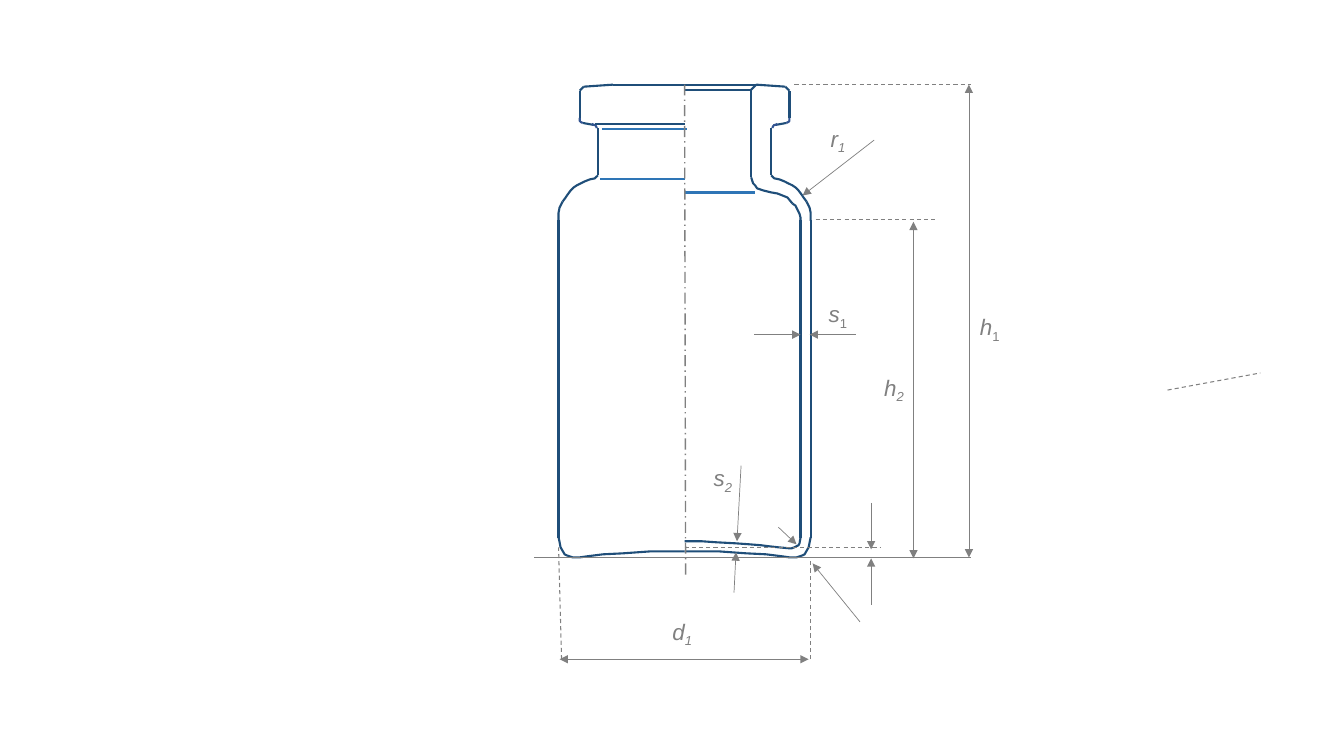
from dataclasses import dataclass

from lxml.etree import SubElement
from pptx import Presentation
from pptx.dml.color import RGBColor
from pptx.enum.dml import MSO_LINE as DASH
from pptx.enum.shapes import MSO_CONNECTOR as CONN
from pptx.enum.text import MSO_AUTO_SIZE as FIT
from pptx.oxml.ns import qn
from pptx.util import Pt

PX = 9144  # EMU per px, 100 px to the inch


@dataclass(frozen=True)
class Theme:
    glass: str = "1F4E79"
    fillet: str = "325491"
    edge: str = "2E75B6"
    grey: str = "808080"
    font: str = "Arial"
    label: float = 16
    wall: float = 1.5
    axis: float = 1
    guide: float = 0.75
    arrow: float = 0.5


THEME = Theme()

# Vial shape: px right of the axis and below the rim
OUTER = [
    [(86, 90), (88, 92), (89, 93), (94, 94), (99, 96), (103, 98), (107, 100),
     (110, 102), (113, 105), (116, 109), (118, 112), (121, 116)],  # shoulder
    [(121, 116), (124, 122), (125, 127), (125, 135)],
    [(104, 33), (104, 6)],  # lip
    [(104, 6), (100, 2)],
    [(100, 2), (71, 0)],
    [(90, 40), (101, 38)],
    [(86, 90), (86, 43)],  # neck
    [(125, 450), (125, 134)],  # wall
    [(125, 449), (123, 459), (119, 466), (117, 467), (114, 468), (111, 469),
     (104, 469), (97, 468), (81, 466), (61, 465), (33, 463), (0, 463)],  # base
]
FILLETS = [
    [(87, 43), (88, 41), (89, 40), (90, 40), (92, 39)],
    [(101, 38), (103, 37), (104, 36), (104, 33)],
]
INNER = [
    [(-71, 0), (71, 0)],  # rim
    [(0, 5), (66, 5)],
    [(66, 5), (71, 0)],
    [(66, 92), (66, 5)],  # neck
    [(66, 92), (67, 95), (68, 98), (70, 100), (72, 103), (75, 104), (78, 105),
     (82, 106), (86, 107), (92, 108), (97, 110), (102, 112), (107, 118)],
    [(107, 118), (110, 120), (112, 124), (114, 128), (115, 132), (115, 136)],
    [(115, 450), (115, 134)],  # wall
    [(115, 449), (114, 455), (113, 457), (109, 459), (106, 460), (104, 460),
     (93, 459), (84, 458), (76, 457), (64, 456), (50, 455), (31, 454),
     (17, 453), (0, 453)],  # base
    [(-89, 39), (0, 39)],  # underside of the lip
]
EDGES = [[(-84, 94), (0, 94)], [(0, 107), (70, 107)], [(-82, 44), (2, 44)]]

# Guides and arrows, measured from the same point
GUIDES = [
    [(130, 134), (248, 134)],
    [(479, 303), (571, 286)],
    [(0, 459), (195, 459)],
    [(109, 0), (284, 0)],
    [(125, 570), (125, 470)],
    [(-122, 570), (-125, 459)],
]
SPANS = [
    [(282, 0), (282, 469)],
    [(227, 136), (227, 470)],
    [(-124, 570), (123, 570)],
]
POINTERS = [
    [(174, 533), (127, 475)],
    [(49, 504), (51, 464)],
    [(56, 378), (52, 453)],
    [(188, 55), (117, 110)],
    [(185, 415), (185, 461)],
    [(185, 516), (185, 470)],
    [(93, 439), (111, 456)],
    [(170, 248), (124, 248)],
    [(69, 248), (115, 248)],
]
# Letter, index, index in italics, left, top, width
LABELS = [
    ("s", "1", False, 133, 209, 40),
    ("h", "1", False, 283, 222, 41),
    ("h", "2", True, 188, 282, 41),
    ("s", "2", True, 19, 372, 40),
    ("d", "1", True, -22, 524, 41),
    ("r", "1", True, 135, 35, 36),
]


def style(line, color, width, dash=None):
    line.color.rgb = RGBColor.from_string(color)
    line.width = Pt(width)
    if dash:
        line.dash_style = dash


def add_line(s, box, points, color, width, dash=None, ends=()):
    (x1, y1), (x2, y2) = [((box[0] + x) * PX, (box[1] + y) * PX) for x, y in points]
    c = s.shapes.add_connector(CONN.STRAIGHT, x1, y1, x2, y2)
    style(c.line, color, width, dash)
    for end in ends:
        SubElement(c.line._get_or_add_ln(), qn(end)).set("type", "triangle")
    SubElement(c._element.spPr, qn("a:effectLst"))


def add_curve(s, box, points, color, width):
    start, *rest = [(box[0] + x, box[1] + y) for x, y in points]
    fb = s.shapes.build_freeform(*start, scale=PX)
    fb.add_line_segments(rest, close=False)
    sp = fb.convert_to_shape()
    sp.fill.background()
    sp.shadow.inherit = False
    style(sp.line, color, width)


def add_vial(s, box):
    mirrored = [[[(-x, y) for x, y in part] for part in parts]
                for parts in (OUTER, FILLETS)]
    for parts, color in (
        (OUTER, THEME.glass), (FILLETS, THEME.fillet),
        (mirrored[0], THEME.glass), (mirrored[1], THEME.fillet),
        (INNER, THEME.glass), (EDGES, THEME.edge),
    ):
        for part in parts:
            draw = add_line if len(part) == 2 else add_curve
            draw(s, box, part, color, THEME.wall)


def add_dimensions(s, box):
    # Axis and ground line
    add_line(s, box, [(1, 486), (0, 0)], THEME.grey, THEME.axis, DASH.LONG_DASH_DOT)
    add_line(s, box, [(-149, 469), (284, 469)], THEME.grey, THEME.axis)
    # Dashed guides and arrows
    for guide in GUIDES:
        add_line(s, box, guide, THEME.grey, THEME.guide, DASH.DASH)
    for span in SPANS:
        add_line(s, box, span, THEME.grey, THEME.arrow, ends=("a:headEnd", "a:tailEnd"))
    for pointer in POINTERS:
        add_line(s, box, pointer, THEME.grey, THEME.arrow, ends=("a:tailEnd",))


def add_label(s, box, letter, index, italic, x, y, w):
    tb = s.shapes.add_textbox((box[0] + x) * PX, (box[1] + y) * PX, w * PX, 37 * PX)
    tf = tb.text_frame
    tf.word_wrap = False
    tf.auto_size = FIT.SHAPE_TO_FIT_TEXT
    p = tf.paragraphs[0]
    for text, slanted in ((letter, True), (index, italic)):
        r = p.add_run()
        r.text = text
        r.font.name = THEME.font
        r.font.size = Pt(THEME.label)
        r.font.italic = slanted
        r.font.color.rgb = RGBColor.from_string(THEME.grey)
    r._r.get_or_add_rPr().set("baseline", "-25000")  # index as subscript


def add_vial_drawing(s, box):
    add_vial(s, box)
    add_dimensions(s, box)
    for label in LABELS:
        add_label(s, box, *label)


def main():
    prs = Presentation()
    prs.slide_width, prs.slide_height = 1333 * PX, 750 * PX
    s = prs.slides.add_slide(prs.slide_layouts[6])
    add_vial_drawing(s, (679, 84))  # where the axis meets the rim
    prs.save("out.pptx")


if __name__ == "__main__":
    main()
